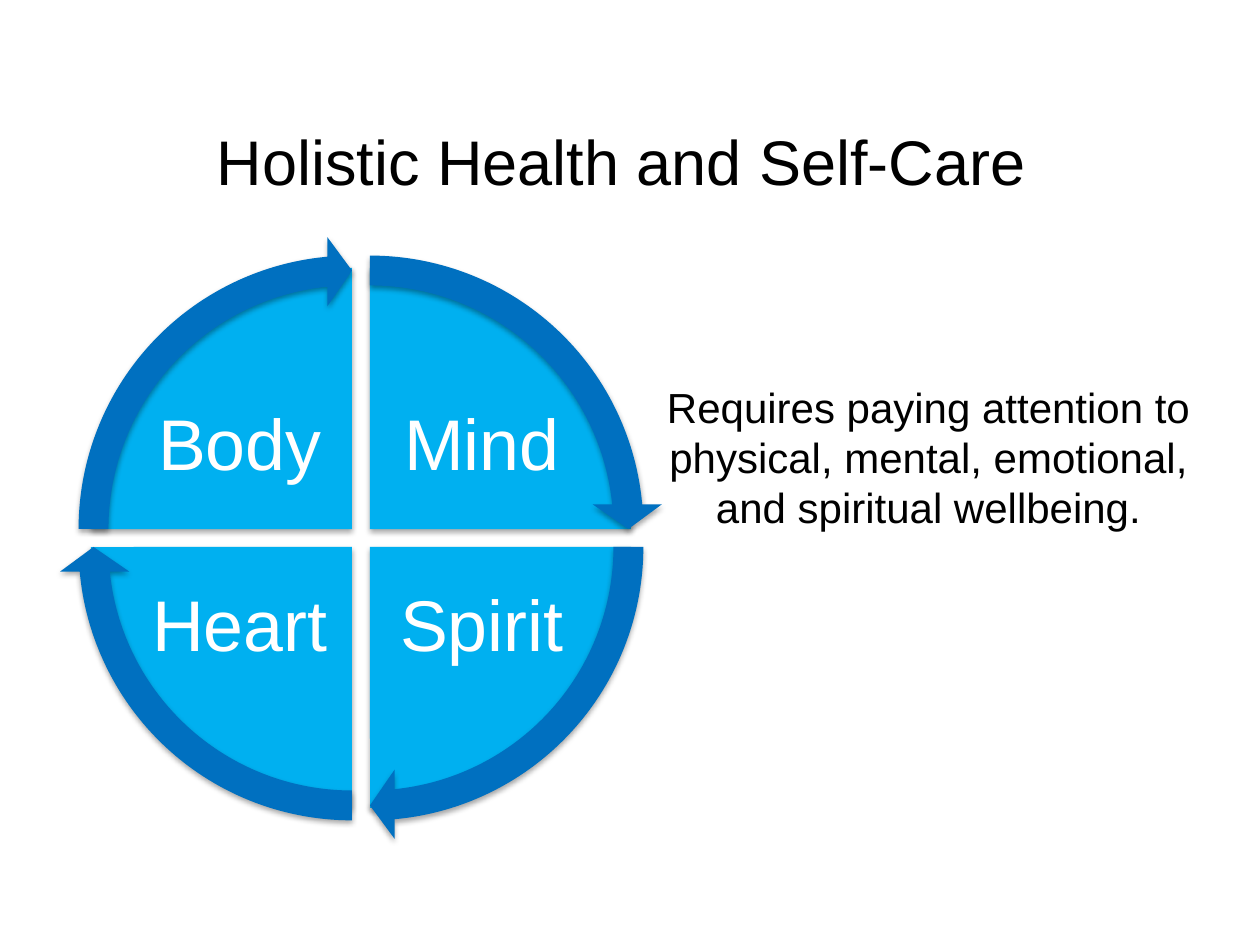
from dataclasses import dataclass

import lxml.etree
import pptx
import pptx.dml.color
import pptx.enum.shapes
import pptx.enum.text
import pptx.oxml.ns
import pptx.util

EMU_PER_PX = 914400 / 126
COLORS = {"text": "000000", "wedge": "00B0F0", "arrow": "0070C0",
          "label": "FFFFFF", "shadow": "000000"}
FONT = "Arial"

WEDGE_SIZE, ARROW_SIZE = 522, 586
LEFT, RIGHT, UPPER, LOWER = 352, 370, 529, 547   # wedge corners around the gap
LABEL_SHIFT_X, LABEL_SHIFT_Y = 224, 163          # insets that push a label into its quarter
ANGLE_UNIT = 0.6                                 # adjustment units per degree
ARROW_SWEEP = 84.54


@dataclass(frozen=True)
class Quarter:
    label: str
    corner_x: int
    corner_y: int
    start_angle: int


QUARTERS = [
    Quarter("Mind", RIGHT, UPPER, 270),
    Quarter("Spirit", RIGHT, LOWER, 0),
    Quarter("Heart", LEFT, LOWER, 90),
    Quarter("Body", LEFT, UPPER, 180),
]


def px(length: float) -> pptx.util.Emu:
    return pptx.util.Emu(round(length * EMU_PER_PX))


def rgb(name: str) -> pptx.dml.color.RGBColor:
    return pptx.dml.color.RGBColor.from_string(COLORS[name])


def write(frame, text: str, size: int, color: str) -> None:
    frame.text = text
    frame.word_wrap = True
    paragraph = frame.paragraphs[0]
    paragraph.alignment = pptx.enum.text.PP_ALIGN.CENTER
    font = paragraph.runs[0].font
    font.name, font.size = FONT, pptx.util.Pt(size)
    font.color.rgb = rgb(color)


def add_round(shapes, preset, quarter: Quarter, size: int, color: str, settings):
    """Preset centred on the quarter's corner, with a soft shadow straight below."""
    part = shapes.add_shape(preset, px(quarter.corner_x - size / 2),
                            px(quarter.corner_y - size / 2), px(size), px(size))
    for index, value in enumerate(settings):
        part.adjustments[index] = value
    part.fill.solid()
    part.fill.fore_color.rgb = rgb(color)
    part.line.fill.background()
    part.shadow.inherit = False
    qn = pptx.oxml.ns.qn
    effects = part.element.spPr.find(qn("a:effectLst"))
    shadow = lxml.etree.SubElement(
        effects, qn("a:outerShdw"), blurRad="40000", dist="23000",
        dir="5400000", rotWithShape="0")
    tone = lxml.etree.SubElement(shadow, qn("a:srgbClr"), val=COLORS["shadow"])
    lxml.etree.SubElement(tone, qn("a:alpha"), val="35000")
    return part


def draw_wedge(shapes, quarter: Quarter) -> None:
    start = quarter.start_angle
    settings = (start * ANGLE_UNIT, (start + 90) % 360 * ANGLE_UNIT)
    wedge = add_round(shapes, pptx.enum.shapes.MSO_SHAPE.PIE, quarter,
                      WEDGE_SIZE, "wedge", settings)
    frame = wedge.text_frame
    write(frame, quarter.label, 41, "label")
    frame.paragraphs[0].line_spacing = 0.9
    frame.word_wrap = False
    frame.vertical_anchor = pptx.enum.text.MSO_ANCHOR.MIDDLE
    on_right, on_bottom = quarter.corner_x == RIGHT, quarter.corner_y == LOWER
    frame.margin_left = px(LABEL_SHIFT_X * on_right)
    frame.margin_right = px(LABEL_SHIFT_X * (not on_right))
    frame.margin_top = px(LABEL_SHIFT_Y * on_bottom)
    frame.margin_bottom = px(LABEL_SHIFT_Y * (not on_bottom))


def draw_arrow(shapes, quarter: Quarter) -> None:
    start = quarter.start_angle * ANGLE_UNIT
    settings = (0.051, 3.275, start + ARROW_SWEEP * ANGLE_UNIT, start, 0.059)
    add_round(shapes, pptx.enum.shapes.MSO_SHAPE.CIRCULAR_ARROW, quarter,
              ARROW_SIZE, "arrow", settings)


def main() -> None:
    deck = pptx.Presentation()
    deck.slide_width, deck.slide_height = px(1260), px(945)
    slide = deck.slides.add_slide(deck.slide_layouts[5])
    shapes = slide.shapes

    # Title
    title = shapes.title
    title.left, title.top, title.width, title.height = px(63), px(116), px(1134), px(136)
    write(title.text_frame, "Holistic Health and Self-Care ", 36, "text")
    title.text_frame.auto_size = pptx.enum.text.MSO_AUTO_SIZE.NONE
    title.text_frame.vertical_anchor = pptx.enum.text.MSO_ANCHOR.TOP

    # Cycle: four wedges under four arrows
    for quarter in QUARTERS:
        draw_wedge(shapes, quarter)
    for quarter in QUARTERS:
        draw_arrow(shapes, quarter)

    # Explanation beside the cycle
    explanation = shapes.add_textbox(px(645), px(375), px(567), px(217))
    write(explanation.text_frame,
          "Requires paying attention to physical, mental, emotional, "
          "and spiritual wellbeing.", 24, "text")

    deck.save("out.pptx")


if __name__ == "__main__":
    main()
